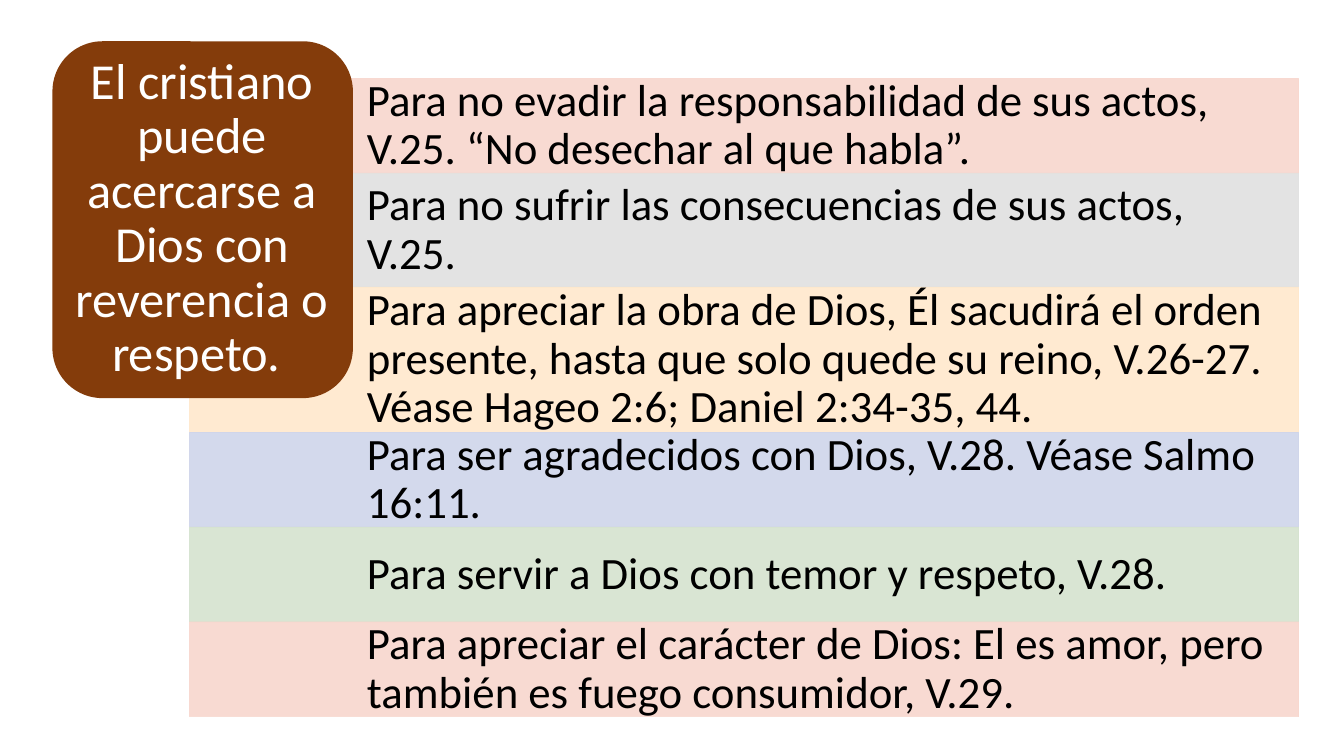
from dataclasses import dataclass

from lxml import etree
from pptx import Presentation
from pptx.dml.color import RGBColor
from pptx.enum.shapes import MSO_SHAPE
from pptx.enum.text import MSO_ANCHOR, PP_ALIGN
from pptx.oxml.ns import qn
from pptx.shapes.autoshape import Shape
from pptx.slide import Slide
from pptx.util import Inches, Pt

RECT = MSO_SHAPE.RECTANGLE
ROUND = MSO_SHAPE.ROUNDED_RECTANGLE
MIDDLE = MSO_ANCHOR.MIDDLE
LEFT = PP_ALIGN.LEFT
CENTER = PP_ALIGN.CENTER

PINK = RGBColor(0xF8, 0xD7, 0xCE)
GRAY = RGBColor(0xE1, 0xE1, 0xE1)
CREAM = RGBColor(0xFF, 0xE8, 0xCC)
BLUE = RGBColor(0xCF, 0xD5, 0xEA)
GREEN = RGBColor(0xD5, 0xE3, 0xCF)
BROWN = RGBColor(0x84, 0x3C, 0x0B)
BLACK = RGBColor(0, 0, 0)
WHITE = RGBColor(0xFF, 0xFF, 0xFF)

FONT = "Calibri"
TOP = 0.78
PAD = 0.25


@dataclass
class Box:
    left: float
    top: float
    width: float
    height: float


@dataclass
class Band:
    text: str
    color: RGBColor
    height: float = 0.94


BANDS = [
    Band("Para no evadir la responsabilidad de sus actos, V.25. “No desechar al que habla”.", PINK),
    Band("Para no sufrir las consecuencias de sus actos, V.25.", GRAY, 1.13),
    Band("Para apreciar la obra de Dios, Él sacudirá el orden presente, hasta que solo "
         "quede su reino, V.26-27. Véase Hageo 2:6; Daniel 2:34-35, 44.", CREAM, 1.44),
    Band("Para ser agradecidos con Dios, V.28. Véase Salmo 16:11.", BLUE),
    Band("Para servir a Dios con temor y respeto, V.28.", GREEN),
    Band("Para apreciar el carácter de Dios: El es amor, pero también es fuego consumidor, V.29.",
         PINK),
]
TITLE = "El cristiano puede acercarse a Dios con reverencia o respeto. "


def place(box: Box) -> tuple:
    return Inches(box.left), Inches(box.top), Inches(box.width), Inches(box.height)


def add_block(slide: Slide, kind: MSO_SHAPE, box: Box, color: RGBColor) -> Shape:
    shape = slide.shapes.add_shape(kind, *place(box))
    shape.shadow.inherit = False
    shape.fill.solid()
    shape.fill.fore_color.rgb = color
    shape.line.fill.background()
    return shape


def add_band(slide: Slide, box: Box, color: RGBColor) -> None:
    shape = add_block(slide, RECT, box, color)
    shape.line.color.rgb = color
    shape.line.width = Pt(0.5)
    # Fill and line are 90% opaque
    for tint in shape.element.spPr.iter(qn("a:srgbClr")):
        etree.SubElement(tint, qn("a:alpha")).set("val", "90000")


def add_text(slide: Slide, box: Box, text: str, *, size: int, color: RGBColor,
             align: PP_ALIGN = LEFT, pad: float = 0) -> None:
    frame = slide.shapes.add_textbox(*place(box)).text_frame
    frame.word_wrap = True
    frame.vertical_anchor = MIDDLE
    frame.margin_left = 0
    frame.margin_top = frame.margin_right = frame.margin_bottom = Inches(pad)
    para = frame.paragraphs[0]
    para.alignment = align
    para.line_spacing = 0.9
    run = para.add_run()
    run.text = text
    run.font.name = FONT
    run.font.size = Pt(size)
    run.font.color.rgb = color


def main() -> None:
    deck = Presentation()
    deck.slide_width = Inches(13.33)
    deck.slide_height = Inches(7.5)
    slide = deck.slides.add_slide(deck.slide_layouts[6])

    # Stacked bands with their reasons
    top = TOP
    for band in BANDS:
        add_band(slide, Box(1.88, top, 11, band.height), band.color)
        add_text(slide, Box(3.64, top, 9.24, band.height), band.text,
                 size=32, color=BLACK, pad=PAD)
        top += band.height

    # Title block over the bands
    add_block(slide, ROUND, Box(0.52, 0.41, 2.98, 3.54), BROWN)
    add_text(slide, Box(0.66, 0.55, 2.69, 3.25), TITLE, size=36, color=WHITE, align=CENTER)

    deck.save("out.pptx")


if __name__ == "__main__":
    main()
